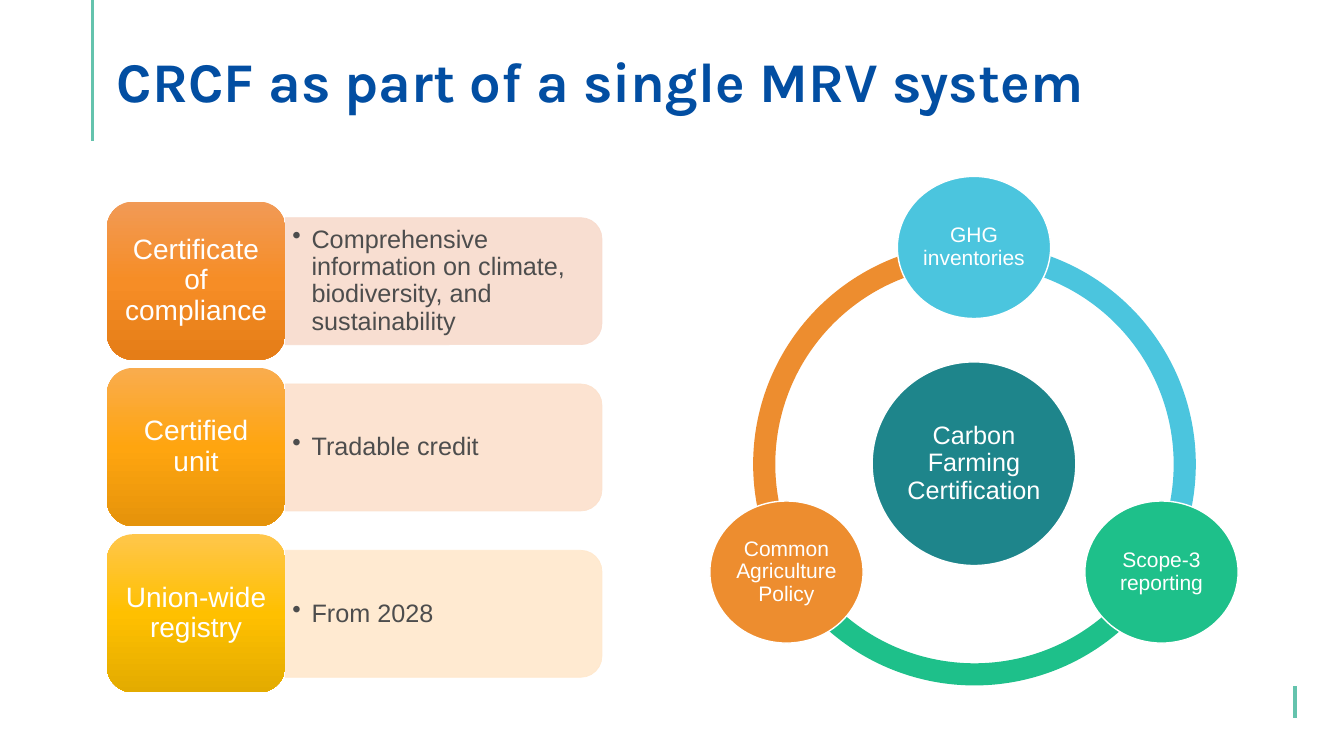
from copy import deepcopy
from dataclasses import dataclass
from math import cos, radians, sin

from lxml import etree
from pptx import Presentation
from pptx.dml.color import RGBColor
from pptx.enum.shapes import MSO_CONNECTOR, MSO_SHAPE
from pptx.enum.text import MSO_ANCHOR, PP_ALIGN
from pptx.oxml.ns import qn
from pptx.shapes.autoshape import Shape
from pptx.slide import Slide
from pptx.util import Emu, Pt

RECTANGLE = MSO_SHAPE.RECTANGLE
ROUNDED = MSO_SHAPE.ROUNDED_RECTANGLE
ROUNDED_TOP = MSO_SHAPE.ROUND_2_SAME_RECTANGLE
ELLIPSE = MSO_SHAPE.OVAL
ARC = MSO_SHAPE.BLOCK_ARC
STRAIGHT = MSO_CONNECTOR.STRAIGHT
MIDDLE, BOTTOM = MSO_ANCHOR.MIDDLE, MSO_ANCHOR.BOTTOM
LEFT, CENTER = PP_ALIGN.LEFT, PP_ALIGN.CENTER

EMU_PER_PX = 9144
WHITE, ACCENT, TITLE_BLUE, TEXT_GRAY = "FFFFFF", "64C3AD", "024EA2", "4D4D4D"
ROW_TOP, ROW_PITCH = 200, 165
TILE_LEFT, TILE_WIDTH, TILE_HEIGHT = 106, 177, 157
PANEL_WIDTH, PANEL_HEIGHT = 314, 126
RING_X, RING_Y, RING_SIZE, ORBIT = 966, 460, 439, 215
HUB_SIZE, NODE_WIDTH, NODE_HEIGHT = 202, 152, 141
ARC_SWEEP, ARC_UNIT, ARC_THICKNESS = 120, 0.6, 0.05


@dataclass(frozen=True)
class Box:
    left: int
    top: int
    width: int
    height: int


@dataclass(frozen=True)
class TextStyle:
    size: int
    color: str = WHITE
    font: str = "Arial"
    bold: bool = False
    align: PP_ALIGN = CENTER
    anchor: MSO_ANCHOR = MIDDLE
    insets: tuple[int, int, int, int] = (2, 2, 2, 2)


@dataclass(frozen=True)
class Row:
    label: str
    detail: str
    gradient: tuple[str, str, str]
    panel_color: str


@dataclass(frozen=True)
class Node:
    label: str
    angle: int
    color: str


TITLE_STYLE = TextStyle(40, TITLE_BLUE, "Karla", True, LEFT, BOTTOM, (10, 5, 10, 0))
TILE_STYLE = TextStyle(20, insets=(8, 4, 8, 4))
DETAIL_STYLE = TextStyle(18, TEXT_GRAY, align=LEFT, insets=(7, 4, 7, 4))
HUB_STYLE = TextStyle(18, insets=(3, 3, 3, 3))
NODE_STYLE = TextStyle(15)

ROWS = (
    Row("Certificate of compliance",
        "Comprehensive information on climate, biodiversity, and sustainability",
        ("F19A56", "F68D26", "E57D17"), "F8DBCD"),
    Row("Certified unit", "Tradable credit", ("F9AC4E", "FFA50F", "E5930B"), "FCE1CC"),
    Row("Union-wide registry", "From 2028", ("FFC64B", "FFC000", "E3AB00"), "FFE8CC"),
)
NODES = (
    Node("GHG inventories", 270, "4BC5DE"),
    Node("Scope-3 reporting", 30, "1EC08A"),
    Node("Common Agriculture Policy", 150, "ED8D2F"),
)


def px(value: int) -> Emu:
    return Emu(value * EMU_PER_PX)


def rgb(value: str) -> RGBColor:
    return RGBColor.from_string(value)


def place(box: Box) -> tuple[Emu, Emu, Emu, Emu]:
    return px(box.left), px(box.top), px(box.width), px(box.height)


def centered(x: int, y: int, width: int, height: int) -> Box:
    return Box(x - width // 2, y - height // 2, width, height)


def add_shape(slide: Slide, kind: MSO_SHAPE, box: Box, fill: str,
              line: str = "", line_width: float = 1) -> Shape:
    shape = slide.shapes.add_shape(kind, *place(box))
    shape.shadow.inherit = False
    shape.fill.solid()
    shape.fill.fore_color.rgb = rgb(fill)
    if line:
        shape.line.color.rgb = rgb(line)
        shape.line.width = Pt(line_width)
    else:
        shape.line.fill.background()
    return shape


def write(shape: Shape, text: str, style: TextStyle, bullet_indent: int = 0) -> None:
    frame = shape.text_frame
    frame.text = text
    frame.word_wrap = True
    frame.vertical_anchor = style.anchor
    (frame.margin_left, frame.margin_top,
     frame.margin_right, frame.margin_bottom) = map(px, style.insets)
    paragraph = frame.paragraphs[0]
    paragraph.alignment = style.align
    paragraph.line_spacing = 0.9
    if bullet_indent:
        properties = paragraph._p.get_or_add_pPr()
        properties.set("marL", str(px(bullet_indent)))
        properties.set("indent", str(-px(bullet_indent)))
        etree.SubElement(properties, qn("a:buChar")).set("char", "•")
    for run in paragraph.runs:
        run.font.size = Pt(style.size)
        run.font.name = style.font
        run.font.bold = style.bold
        run.font.color.rgb = rgb(style.color)


def set_gradient(shape: Shape, colors: tuple[str, str, str]) -> None:
    shape.fill.gradient()
    shape.fill.gradient_angle = 270
    first_stop = shape._element.spPr.find(".//" + qn("a:gs"))
    first_stop.addnext(deepcopy(first_stop))
    for stop, color, position in zip(shape.fill.gradient_stops, colors, (0, 0.5, 1)):
        stop.color.rgb = rgb(color)
        stop.position = position


def set_opacity(shape: Shape, percent: int) -> None:
    for color in shape._element.spPr.iter(qn("a:srgbClr")):
        etree.SubElement(color, qn("a:alpha")).set("val", str(percent * 1000))


def draw_frame(slide: Slide) -> None:
    add_shape(slide, RECTANGLE, Box(1282, 680, 5, 33), ACCENT, WHITE, 1.25)
    rule = slide.shapes.add_connector(STRAIGHT, px(92), px(0), px(92), px(140))
    rule.line.color.rgb = rgb(ACCENT)
    rule.line.width = Pt(2.25)
    etree.SubElement(rule._element.spPr, qn("a:effectLst"))
    title = slide.shapes.add_textbox(*place(Box(106, 28, 1150, 86)))
    write(title, "CRCF as part of a single MRV system", TITLE_STYLE)


def draw_row(slide: Slide, row: Row, top: int) -> None:
    panel_left = TILE_LEFT + TILE_WIDTH
    middle = top + TILE_HEIGHT // 2 + 1
    upright = centered(panel_left + PANEL_WIDTH // 2, middle, PANEL_HEIGHT, PANEL_WIDTH)
    panel = add_shape(slide, ROUNDED_TOP, upright, row.panel_color, row.panel_color, 0.5)
    panel.rotation = 90
    set_opacity(panel, 90)
    detail = slide.shapes.add_textbox(*place(Box(panel_left, middle - 57, 308, 114)))
    write(detail, row.detail, DETAIL_STYLE, bullet_indent=19)
    tile = add_shape(slide, ROUNDED, Box(TILE_LEFT, top, TILE_WIDTH, TILE_HEIGHT),
                     row.gradient[1])
    set_gradient(tile, row.gradient)
    write(tile, row.label, TILE_STYLE)


def draw_cycle(slide: Slide) -> None:
    for node in reversed(NODES):
        arc = add_shape(slide, ARC, centered(RING_X, RING_Y, RING_SIZE, RING_SIZE), node.color)
        arc.adjustments[0] = node.angle * ARC_UNIT
        arc.adjustments[1] = (node.angle + ARC_SWEEP) % 360 * ARC_UNIT
        arc.adjustments[2] = ARC_THICKNESS
    hub = add_shape(slide, ELLIPSE, centered(RING_X, RING_Y, HUB_SIZE, HUB_SIZE),
                    "1E858B", WHITE)
    write(hub, "Carbon Farming Certification", HUB_STYLE)
    for node in NODES:
        x = RING_X + round(ORBIT * cos(radians(node.angle)))
        y = RING_Y + round(ORBIT * sin(radians(node.angle)))
        circle = add_shape(slide, ELLIPSE, centered(x, y, NODE_WIDTH, NODE_HEIGHT),
                           node.color, WHITE)
        write(circle, node.label, NODE_STYLE)


def main() -> None:
    presentation = Presentation()
    presentation.slide_width, presentation.slide_height = px(1333), px(750)
    slide = presentation.slides.add_slide(presentation.slide_layouts[6])
    draw_frame(slide)
    draw_cycle(slide)
    for index, row in enumerate(ROWS):
        draw_row(slide, row, ROW_TOP + index * ROW_PITCH)
    presentation.save("out.pptx")


if __name__ == "__main__":
    main()
